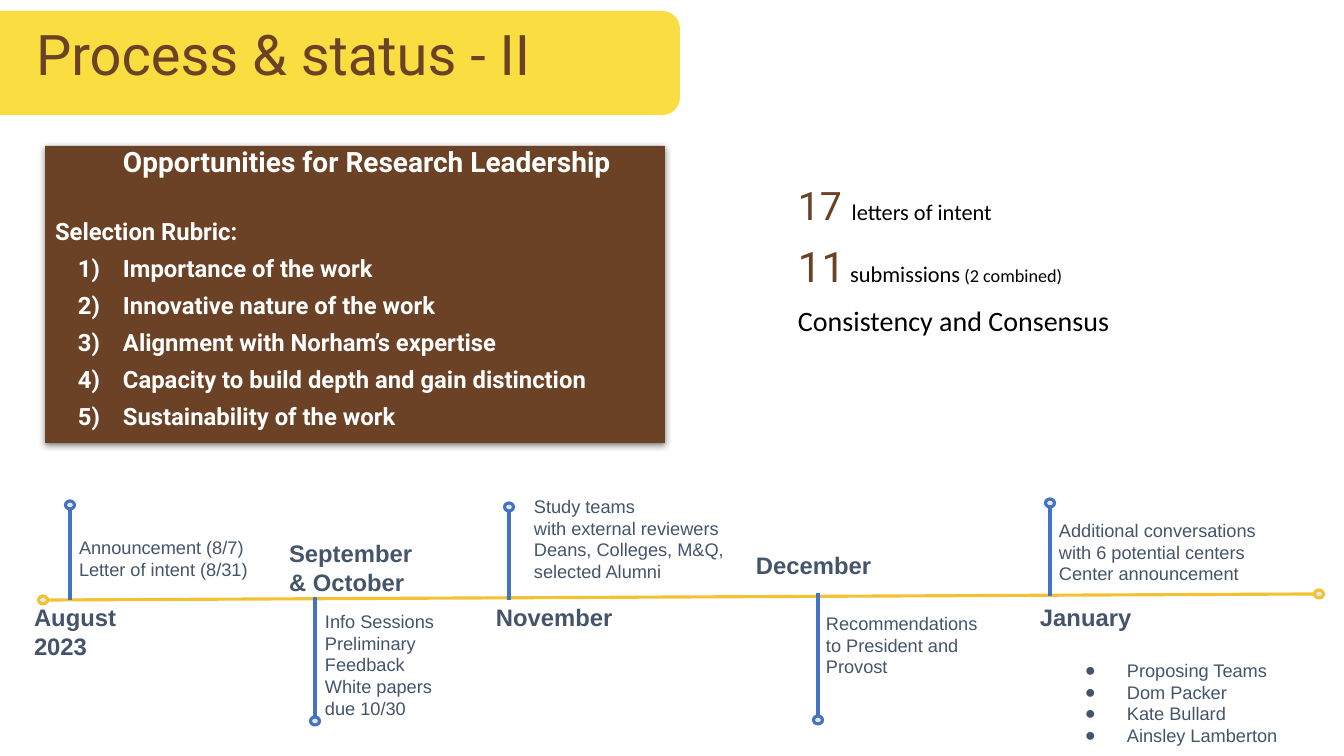
from lxml import etree
from pptx import Presentation
from pptx.dml.color import RGBColor
from pptx.enum.shapes import MSO_CONNECTOR, MSO_SHAPE
from pptx.enum.text import MSO_ANCHOR, MSO_AUTO_SIZE, PP_ALIGN
from pptx.oxml import parse_xml
from pptx.oxml.ns import nsdecls, qn
from pptx.util import Pt

LINE = MSO_CONNECTOR.STRAIGHT
RECT, ROUND, OVAL = MSO_SHAPE.RECTANGLE, MSO_SHAPE.ROUNDED_RECTANGLE, MSO_SHAPE.OVAL
TOP, LEFT, FIXED = MSO_ANCHOR.TOP, PP_ALIGN.LEFT, MSO_AUTO_SIZE.NONE


class Theme:
    brown, yellow, gold = "6C4226", "FADE41", "F2C232"
    blue, slate, pale = "4472C4", "44546A", "E7E6E6"
    white, black = "FFFFFF", "000000"
    title = dict(size=40, name="Roboto", color=brown)
    head = dict(size=20, name="Roboto", color=white, bold=True)
    item = dict(head, size=17)
    count = dict(size=28, name="Roboto", color=brown)
    total = dict(count, size=30)
    body = dict(size=16, name="Calibri", color=black)
    aside = dict(body, size=13)
    close = dict(body, size=20)
    month = dict(size=17, name="Arial", color=slate, bold=True)
    note = dict(size=13, name="Arial", color=slate)
    stroke = 2.25


TITLE = "Process & status - II"
HEAD = "Opportunities for Research Leadership"
RUBRIC = "Selection Rubric:"
ITEMS = [
    "Importance of the work",
    "Innovative nature of the work",
    "Alignment with Norham’s expertise",
    "Capacity to build depth and gain distinction",
    "Sustainability of the work",
]
COUNTS = [
    [("17 ", Theme.count), ("letters of intent", Theme.body)],
    [("11", Theme.total), (" submissions", Theme.body), (" (2 combined)", Theme.aside)],
    [("Consistency and Consensus", Theme.close)],
]
STAGES = [
    dict(x=70, dot=505, axis=600,
         month=(["August", "2023"], (21, 590, 154, 78)),
         note=(["Announcement (8/7)", "Letter of intent (8/31)"], (66, 523, 218, 78))),
    dict(x=315, dot=721, axis=597,
         month=(["September & October"], (276, 526, 154, 78)),
         note=(["Info Sessions", "Preliminary Feedback", "White papers due 10/30"],
               (312, 597, 167, 140))),
    dict(x=509, dot=507, axis=600,
         month=(["November"], (483, 590, 150, 47)),
         note=(["Study teams", "with external reviewers",
                "Deans, Colleges, M&Q, selected Alumni"], (521, 482, 267, 127))),
    dict(x=818, dot=720, axis=593,
         month=(["December"], (743, 538, 150, 47)),
         note=(["Recommendations to President and Provost"], (813, 599, 188, 98))),
    dict(x=1050, dot=503, axis=596,
         month=(["January"], (1027, 590, 150, 47)),
         note=(["Additional conversations with 6 potential centers",
                "Center announcement"], (1046, 506, 250, 131))),
]
TEAMS = ["Proposing Teams", "Dom Packer", "Kate Bullard", "Ainsley Lamberton"]
AXIS = (47, 600, 1314, 594)
ENDS = [(43, 600), (1319, 594)]
NUMBER = '<a:buFont {} typeface="+mj-lt"/>', '<a:buAutoNum {} type="arabicParenR"/>'
BULLET = '<a:buFont {} typeface="Arial"/>', '<a:buChar {} char="●"/>'
SHADOW = ('<a:effectLst {}><a:outerShdw blurRad="57150" dist="19050" dir="5400000" '
          'algn="bl" rotWithShape="0"><a:srgbClr val="000000"><a:alpha val="50000"/>'
          '</a:srgbClr></a:outerShdw></a:effectLst>')


def px(n):
    return round(n * 914400 / 100.8)


def rgb(code):
    return RGBColor.from_string(code)


def put(obj, fmt):
    for key, val in fmt.items():
        setattr(obj, key, val)


def place(shape, box):
    put(shape, dict(zip(("left", "top", "width", "height"), map(px, box))))


def frame(shape, side, edge):
    put(shape.text_frame, dict(
        word_wrap=True, auto_size=FIXED, vertical_anchor=TOP,
        margin_left=px(side), margin_right=px(side),
        margin_top=px(edge), margin_bottom=px(edge)))
    return shape.text_frame


def para(text, runs, first=False, mark=None, left=0, hang=0, **gap):
    par = text.paragraphs[0] if first else text.add_paragraph()
    put(par, dict(alignment=LEFT, **gap))
    props = par._p.get_or_add_pPr()
    props.set("marL", str(px(left)))
    props.set("indent", str(px(-hang)))
    if mark:
        tint = etree.SubElement(props, qn("a:buClr"))
        etree.SubElement(tint, qn("a:srgbClr")).set("val", runs[0][1]["color"])
        for part in mark:
            props.append(parse_xml(part.format(nsdecls("a"))))
    for word, fmt in runs:
        run = par.add_run()
        run.text = word
        put(run.font, {k: v for k, v in fmt.items() if k not in ("size", "color")})
        run.font.size = Pt(fmt["size"])
        run.font.color.rgb = rgb(fmt["color"])


def note(slide, lines, box, fmt, **opts):
    text = frame(slide.shapes.add_textbox(*map(px, box)), 13, 13)
    for i, line in enumerate(lines):
        para(text, [(line, fmt)], i == 0, **opts)


def block(slide, kind, box, fill, edge=None):
    shape = slide.shapes.add_shape(kind, *map(px, box))
    shape.shadow.inherit = False
    shape.fill.solid()
    shape.fill.fore_color.rgb = rgb(fill)
    if edge:
        shape.line.color.rgb = rgb(edge)
        shape.line.width = Pt(Theme.stroke)
    else:
        shape.line.fill.background()
    return shape


def dot(slide, x, y, edge):
    block(slide, OVAL, (x - 4.5, y - 4, 9, 8), Theme.pale, edge)


def rule(slide, ends, color):
    line = slide.shapes.add_connector(LINE, *map(px, ends))
    line.line.color.rgb = rgb(color)
    line.line.width = Pt(Theme.stroke)
    etree.SubElement(line._element.spPr, qn("a:effectLst"))


def header(slide):
    title = slide.shapes.title
    place(title, (23, 6, 680, 104))
    para(frame(title, 13, 13), [(TITLE, Theme.title)], True)
    band = block(slide, ROUND, (-18, 11, 698, 104), Theme.yellow)
    title._element.addprevious(band._element)


def rubric(slide):
    card = block(slide, RECT, (45, 146, 620, 297), Theme.brown)
    props = card._element.spPr
    props.remove(props.find(qn("a:effectLst")))
    props.append(parse_xml(SHADOW.format(nsdecls("a"))))
    text = frame(card, 10, 5)
    gap = dict(line_spacing=0.8, space_before=Pt(10))
    para(text, [(HEAD, Theme.head)], True, left=68, **gap)
    para(text, [(RUBRIC, Theme.item)], line_spacing=0.8, space_before=Pt(32))
    for item in ITEMS:
        para(text, [(item, Theme.item)], mark=NUMBER, left=68, hang=45, **gap)


def counts(slide):
    text = frame(slide.shapes.add_textbox(*map(px, (788, 180, 540, 232))), 10, 5)
    for i, runs in enumerate(COUNTS):
        para(text, runs, i == 0, line_spacing=0.95, space_before=Pt(10))


def timeline(slide):
    rule(slide, AXIS, Theme.gold)
    for x, y in ENDS:
        dot(slide, x, y, Theme.gold)
    for stage in STAGES:
        x, y, axis = stage["x"], stage["dot"], stage["axis"]
        rule(slide, (x, y + (4 if y < axis else -4), x, axis), Theme.blue)
        dot(slide, x, y, Theme.blue)
        note(slide, *stage["month"], Theme.month)
        note(slide, *stage["note"], Theme.note)
    note(slide, TEAMS, (1046, 646, 264, 108), Theme.note, mark=BULLET, left=68, hang=42)


def main():
    deck = Presentation()
    put(deck, dict(slide_width=px(1344), slide_height=px(756)))
    slide = deck.slides.add_slide(deck.slide_layouts[5])
    for draw in (header, rubric, counts, timeline):
        draw(slide)
    deck.save("out.pptx")


if __name__ == "__main__":
    main()
